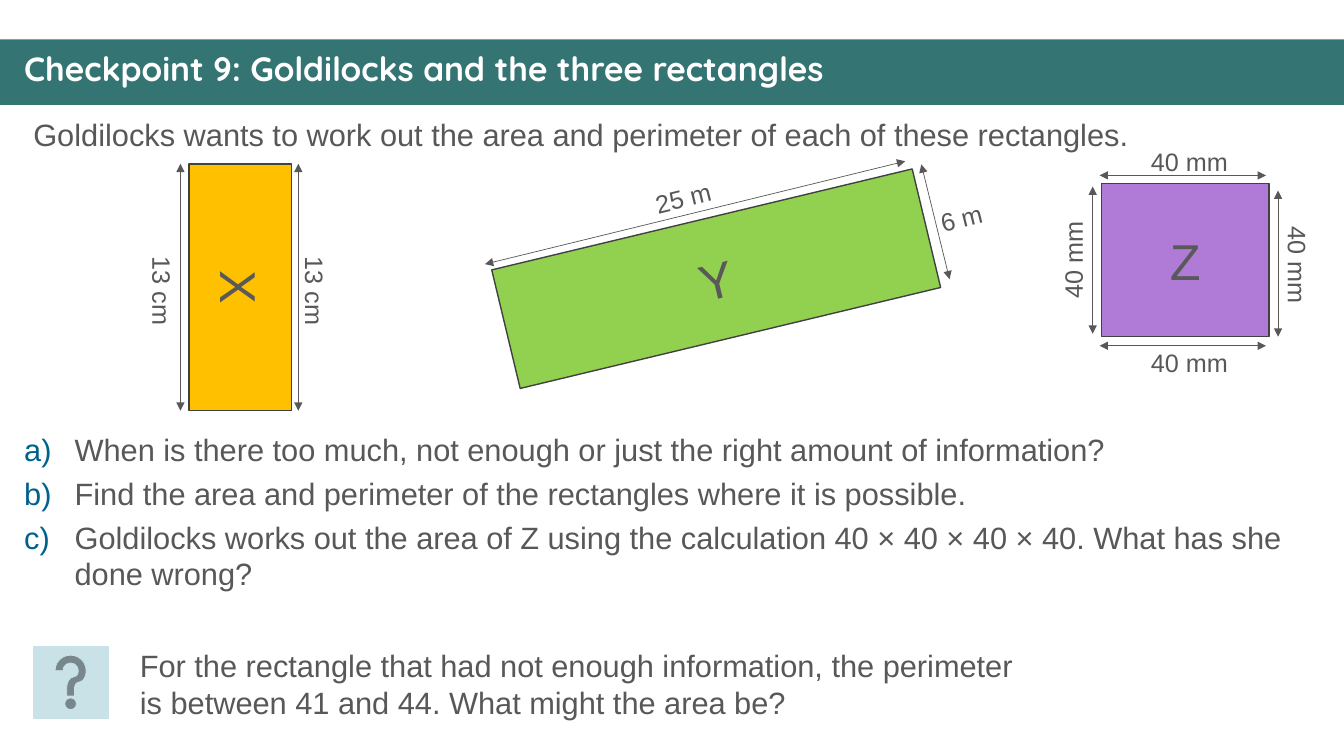
from lxml.etree import SubElement
from pptx import Presentation
from pptx.dml.color import RGBColor
from pptx.enum.shapes import MSO_CONNECTOR, MSO_SHAPE
from pptx.enum.text import MSO_ANCHOR, MSO_AUTO_SIZE, PP_ALIGN
from pptx.oxml.ns import qn
from pptx.util import Pt

COLOURS = {
    "bar": "347574", "title": "FFFFFF", "text": "585858", "letter": "595959",
    "outline": "414141", "number": "00628C", "help": "C8E2E8",
    "x": "FFC000", "y": "92D050", "z": "B07BD7",
}

RECTANGLES = [
    {
        "name": "X", "centre": (171.7, 205.2), "size": (176.4, 73.4), "rotation": 90,
        "arrows": [(41.4, -88.2, 41.4, 88.2), (-42.8, -88.2, -42.8, 88.2)],
        "labels": [("13 cm", 53.3, 2.9, 64, 90), ("13 cm", -55.8, 2.9, 64, 90)],
    },
    {
        "name": "Y", "centre": (511.6, 199.1), "size": (308.9, 87.1), "rotation": 346.5,
        "arrows": [(-165.2, -10.4, 135, -83.9), (146.5, -81.7, 166.7, 0.4)],
        "labels": [("25 m", -23.4, -58, 54.7, 346.2), ("6 m", 175.3, -43.6, 44.6, 346.2)],
    },
    {
        "name": "Z", "centre": (846.7, 185.8), "size": (119.5, 109.4), "rotation": 0,
        "arrows": [(-61.2, -60.5, 57.6, -60.5), (-61.2, 61.2, 57.6, 61.2),
                   (-66.2, 52.6, -66.2, -52.6), (66.2, 54.7, 66.2, -49.7)],
        "labels": [("40 mm", 3.2, -70.6, 69.8, 0), ("40 mm", 3.2, 73.4, 69.8, 0),
                   ("40 mm", 80.3, 3.6, 69.8, 90), ("40 mm", -80.3, -0.7, 69.8, 270)],
    },
]

QUESTIONS = [
    "When is there too much, not enough or just the right amount of information?",
    "Find the area and perimeter of the rectangles where it is possible.",
    "Goldilocks works out the area of Z using the calculation 40 × 40 × 40 × 40. "
    "What has she done wrong?",
]


def colour(name):
    return RGBColor.from_string(COLOURS[name])


def place(shape, box):
    shape.left, shape.top, shape.width, shape.height = (Pt(length) for length in box)


def set_bullet(para, numbered):
    properties = para._p.get_or_add_pPr()
    indent = Pt(36) if numbered else 0
    properties.set("marL", str(indent))
    properties.set("indent", str(-indent))
    if numbered:
        bullet_colour = SubElement(properties, qn("a:buClr"))
        SubElement(bullet_colour, qn("a:srgbClr"), val=COLOURS["number"])
        SubElement(properties, qn("a:buAutoNum"), type="alphaLcParenR")
    else:
        SubElement(properties, qn("a:buNone"))


def write(shape, *texts, size=22, ink="text", font="Arial", bold=False, wrap=True,
          align=PP_ALIGN.LEFT, anchor=MSO_ANCHOR.TOP, spacing=1.0, numbered=False):
    frame = shape.text_frame
    frame.word_wrap = wrap
    frame.auto_size = MSO_AUTO_SIZE.NONE
    frame.vertical_anchor = anchor
    for index, text in enumerate(texts):
        para = frame.add_paragraph() if index else frame.paragraphs[0]
        set_bullet(para, numbered)
        para.alignment = align
        para.line_spacing = spacing
        para.space_before = Pt(5 if index else 0)
        span = para.add_run()
        span.text = text
        span.font.size = Pt(size)
        span.font.name = font
        span.font.bold = bold
        span.font.color.rgb = colour(ink)


def add_block(shapes, preset, box, fill, outline=None, weight=1):
    block = shapes.add_shape(preset, *(Pt(length) for length in box))
    block.shadow.inherit = False
    block.fill.solid()
    block.fill.fore_color.rgb = colour(fill)
    if outline:
        block.line.color.rgb = colour(outline)
        block.line.width = Pt(weight)
    else:
        block.line.fill.background()
    return block


def add_arrow(shapes, ends):
    arrow = shapes.add_connector(MSO_CONNECTOR.STRAIGHT, *(Pt(length) for length in ends))
    arrow.line.color.rgb = colour("text")
    arrow.line.width = Pt(0.5)
    properties = arrow._element.spPr
    line = properties.find(qn("a:ln"))
    for end in ("a:headEnd", "a:tailEnd"):
        SubElement(line, qn(end), type="triangle")
    SubElement(properties, qn("a:effectLst"))


def centred_box(x, y, width, height):
    return x - width / 2, y - height / 2, width, height


def add_heading(page, box):
    left, top, width, height = box
    bar = add_block(page.shapes, MSO_SHAPE.RECTANGLE, box, "bar")
    title = page.shapes.title
    title._element.addprevious(bar._element)
    place(title, (left + 10, top + 5.8, width - 21, height - 13))
    write(title, "Checkpoint 9: Goldilocks and the three rectangles", size=24,
          ink="title", font="Quicksand", bold=True, spacing=0.9)


def add_introduction(page, box):
    introduction = page.placeholders[1]
    place(introduction, box)
    write(introduction, "Goldilocks wants to work out the area and perimeter "
          "of each of these rectangles.", spacing=0.9)


def add_rectangle(page, name, centre, size, rotation, arrows, labels):
    x, y = centre
    shapes = page.shapes.add_group_shape().shapes
    rectangle = add_block(shapes, MSO_SHAPE.RECTANGLE, centred_box(x, y, *size),
                          name.lower(), "outline")
    rectangle.rotation = rotation
    write(rectangle, name, size=36, ink="letter", align=PP_ALIGN.CENTER,
          anchor=MSO_ANCHOR.MIDDLE)
    for x1, y1, x2, y2 in arrows:
        add_arrow(shapes, (x + x1, y + y1, x + x2, y + y2))
    for text, across, down, width, turn in labels:
        box = centred_box(x + across, y + down, width, 28.8)
        label = shapes.add_textbox(*(Pt(length) for length in box))
        label.rotation = turn
        write(label, text, size=18, wrap=False)


def add_questions(page, box):
    questions = page.placeholders[2]
    place(questions, box)
    write(questions, *QUESTIONS, numbered=True)


def add_extension(page, box):
    left, top, width, height = box
    add_block(page.shapes, MSO_SHAPE.ACTION_BUTTON_HELP,
              (left, top + 2.9, 53.3, 51.8), "help", "help", 0.5)
    text_box = page.shapes.add_textbox(Pt(left + 69), Pt(top), Pt(width - 69), Pt(height))
    write(text_box, "For the rectangle that had not enough information, the perimeter "
          "is between 41 and 44. What might the area be?")


def main():
    deck = Presentation()
    deck.slide_width, deck.slide_height = Pt(960), Pt(540)
    page = deck.slides.add_slide(deck.slide_layouts[3])
    add_heading(page, (0, 28.2, 960, 46.8))
    add_introduction(page, (16.6, 82.1, 922.3, 270.7))
    for rectangle in RECTANGLES:
        add_rectangle(page, **rectangle)
    add_questions(page, (10.1, 303.8, 946.1, 124.6))
    add_extension(page, (23.8, 458.6, 727.8, 60.5))
    deck.save("out.pptx")


if __name__ == "__main__":
    main()
